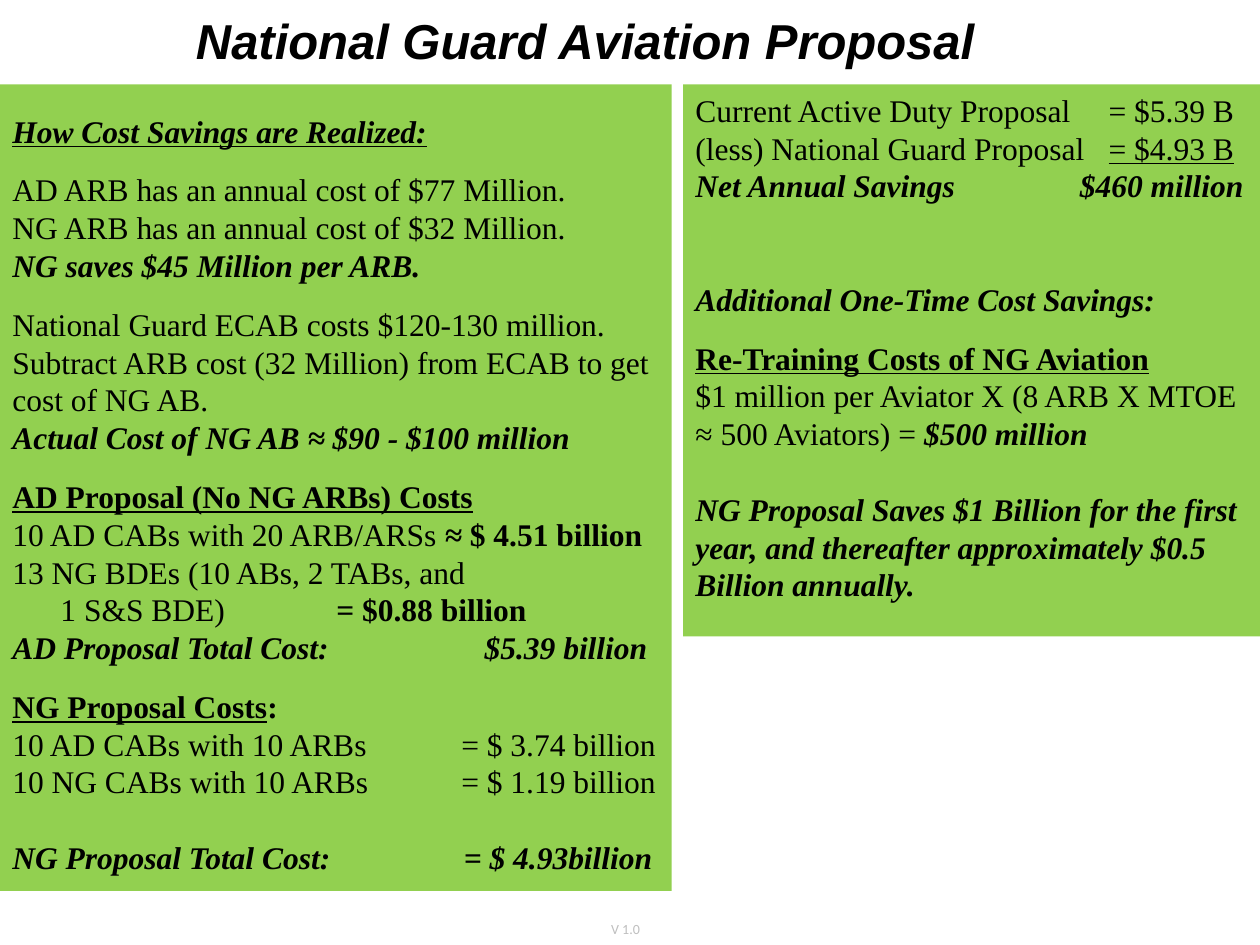
from lxml import etree
from pptx import Presentation
from pptx.dml.color import RGBColor
from pptx.enum.shapes import MSO_SHAPE
from pptx.enum.text import MSO_ANCHOR, MSO_AUTO_SIZE, PP_ALIGN
from pptx.oxml.ns import qn
from pptx.util import Cm, Pt

RECT = MSO_SHAPE.RECTANGLE
TOP = MSO_ANCHOR.TOP
NO_FIT = MSO_AUTO_SIZE.NONE
LEFT, CENTER = PP_ALIGN.LEFT, PP_ALIGN.CENTER

COLORS = {"panel": "92D050", "text": "000000", "version": "BFBFBF"}
BODY_FONT = "Times New Roman"
LINE = 21.6
GAP = 12

BOLD = {"bold": True}
STRONG = {"bold": True, "italic": True}
HEAD = {"bold": True, "underline": True}

SAVINGS = [
    {"runs": [("How Cost Savings are Realized:", {**STRONG, "underline": True})]},
    {"runs": [("AD ARB has an annual cost of $77 Million.", {})], "before": GAP},
    {"runs": [("NG ARB has an annual cost of $32 Million.", {})]},
    {"runs": [("NG saves $45 Million per ARB.", STRONG)]},
    {"runs": [("National Guard ECAB costs $120-130 million.", {})], "before": GAP},
    {"runs": [("Subtract ARB cost (32 Million) from ECAB to get cost of NG AB.", {})]},
    {"runs": [("Actual Cost of NG AB ≈ $90 - $100 million", STRONG)]},
    {"runs": [("AD Proposal (No NG ARBs) Costs", HEAD)], "before": GAP},
    {"runs": [("10 AD CABs with 20 ARB/ARSs ", {}), ("≈ ", STRONG),
              ("$ 4.51 billion", BOLD)]},
    {"runs": [("13 NG BDEs (10 ABs, 2 TABs, and", {})]},
    {"runs": [("\t1 S&S BDE)\t", {}), ("= $0.88 billion", BOLD)], "tabs": (0.97, 6.53)},
    {"runs": [("AD Proposal Total Cost:\t$5.39 billion", STRONG)], "tabs": (9.52,)},
    {"runs": [("NG Proposal Costs", HEAD), (":", BOLD)], "before": GAP},
    {"runs": [("10 AD CABs with 10 ARBs\t= $ 3.74 billion", {})], "tabs": (9.05,)},
    {"runs": [("10 NG CABs with 10 ARBs\t= $ 1.19 billion", {})], "tabs": (9.05,)},
    {"runs": [("NG Proposal Total Cost:\t= $ 4.93billion", STRONG)], "tabs": (9.1,),
     "before": LINE},
]

COMPARISON = [
    {"runs": [("Current Active Duty Proposal\t= $5.39 B", {})], "tabs": (8.33,)},
    {"runs": [("(less) National Guard Proposal\t", {}),
              ("= $4.93 B", {"underline": True})], "tabs": (8.33,)},
    {"runs": [("Net Annual Savings\t$460 million", STRONG)], "tabs": (7.75,)},
    {"runs": [("Additional One-Time Cost Savings:", STRONG)], "before": 2 * LINE},
    {"runs": [("Re-Training Costs of NG Aviation", HEAD)], "before": GAP},
    {"runs": [("$1 million per Aviator X (8 ARB X MTOE ≈ 500 Aviators) = ", {}),
              ("$500 million", STRONG)]},
    {"runs": [("NG Proposal Saves $1 Billion for the first year, and thereafter "
               "approximately $0.5 Billion annually.", STRONG)], "before": LINE},
]


def add_run(p, text, font=BODY_FONT, size=18, color="text", bold=False, italic=False,
            underline=False):
    """Append a formatted run to a paragraph."""
    r = p.add_run()
    r.text = text
    f = r.font
    f.name, f.size = font, Pt(size)
    f.bold, f.italic, f.underline = bold, italic, underline
    f.color.rgb = RGBColor.from_string(COLORS[color])


def set_tabs(p, stops):
    """Give a paragraph left tab stops, in centimetres."""
    tab_list = etree.SubElement(p._p.get_or_add_pPr(), qn("a:tabLst"))
    for stop in stops:
        etree.SubElement(tab_list, qn("a:tab"), pos=str(int(Cm(stop))), algn="l")


def add_panel(s, box, lines, inset_top=0.13):
    """Draw a green panel in the box and fill it with lines of text."""
    sp = s.shapes.add_shape(RECT, *(Cm(v) for v in box))
    sp.shadow.inherit = False
    sp.fill.solid()
    sp.fill.fore_color.rgb = RGBColor.from_string(COLORS["panel"])
    sp.line.fill.background()
    tf = sp.text_frame
    tf.word_wrap = True
    tf.vertical_anchor = TOP
    tf.margin_top = Cm(inset_top)
    for i, line in enumerate(lines):
        p = tf.add_paragraph() if i else tf.paragraphs[0]
        p.alignment = LEFT
        p.line_spacing = Pt(LINE)
        p.space_before = Pt(line.get("before", 0))
        if "tabs" in line:
            set_tabs(p, line["tabs"])
        for text, style in line["runs"]:
            add_run(p, text, **style)


def add_title(s, box):
    """Place the slide title in the box."""
    sp = s.shapes.title
    sp.left, sp.top, sp.width, sp.height = (Cm(v) for v in box)
    tf = sp.text_frame
    tf.auto_size = NO_FIT
    tf.vertical_anchor = TOP
    tf.margin_right = Cm(0.53)
    p = tf.paragraphs[0]
    p.alignment = CENTER
    add_run(p, "National Guard Aviation Proposal", font="Arial", size=28, **STRONG)


def add_version(s, box):
    """Place the version mark in the box."""
    tf = s.shapes.add_textbox(*(Cm(v) for v in box)).text_frame
    tf.word_wrap = False
    add_run(tf.paragraphs[0], "V 1.0", font="Calibri", size=8, color="version")


def main():
    """Build the slide and save it."""
    prs = Presentation()
    prs.slide_width, prs.slide_height = Cm(25.4), Cm(19.05)
    s = prs.slides.add_slide(prs.slide_layouts[5])
    add_title(s, (2.08, 0.08, 19.71, 1.45))
    add_panel(s, (13.77, 1.7, 11.63, 11.13), COMPARISON)
    add_panel(s, (0, 1.7, 13.54, 16.26), SAVINGS, inset_top=0.55)
    add_version(s, (12.07, 18.44, 1.09, 0.61))
    prs.save("out.pptx")


if __name__ == "__main__":
    main()
